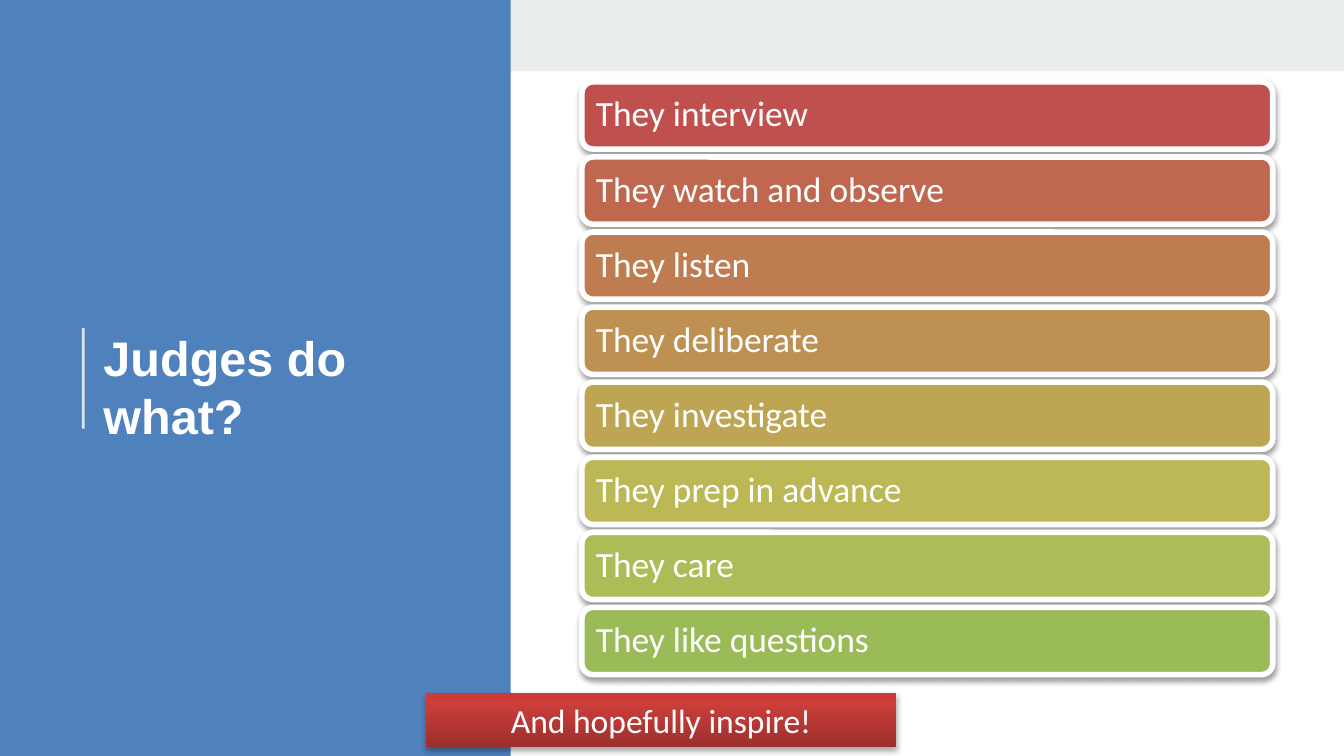
from copy import deepcopy
from lxml import etree
from pptx import Presentation
from pptx.dml.color import RGBColor
from pptx.enum.shapes import MSO_CONNECTOR as Line, MSO_SHAPE as Shape
from pptx.enum.text import MSO_ANCHOR as Anchor, MSO_AUTO_SIZE as Fit, PP_ALIGN as Align
from pptx.oxml.ns import qn
from pptx.util import Inches, Pt

# Content
TITLE = "Judges do what?"
DUTIES = [
    ("They interview", "C0504D"),
    ("They watch and observe", "BF674F"),
    ("They listen", "BF7C50"),
    ("They deliberate", "BE9152"),
    ("They investigate", "BDA554"),
    ("They prep in advance", "BCB856"),
    ("They care", "AEBC57"),
    ("They like questions", "9BBB59"),
]
CLOSING = "And hopefully inspire!"
GLOW = [(0, "9C2F2D"), (0.8, "CB3E3A"), (1, "CE3B37")]
WHITE = "FFFFFF"

# Layout in inches: a 16:9 slide, bars spread evenly from TOP to LAST
PAGE_W = 10
PAGE_H = PAGE_W * 9 / 16
TOP, LAST = 0.61, 4.52
STEP = (LAST - TOP) / (len(DUTIES) - 1)
LEFT, WIDE, HIGH = 4.33, 5.14, 0.5


def paint(color, code):
    color.rgb = RGBColor.from_string(code)


def add_box(kind, x, y, w, h, fill=None):
    box = slide.shapes.add_shape(kind, Inches(x), Inches(y), Inches(w), Inches(h))
    box.shadow.inherit = False
    box.line.fill.background()
    if fill:
        box.fill.solid()
        paint(box.fill.fore_color, fill)
    return box


def add_shadow(box, dist, alpha):
    effects = box._element.spPr.find(qn("a:effectLst"))
    shade = etree.SubElement(effects, qn("a:outerShdw"), blurRad=str(Pt(3.1)),
                             dist=str(Pt(dist)), dir="5400000", rotWithShape="0")
    black = etree.SubElement(shade, qn("a:srgbClr"), val="000000")
    etree.SubElement(black, qn("a:alpha"), val=str(alpha * 1000))


def write(box, text, size, font, align=Align.LEFT, anchor=Anchor.MIDDLE, inset=None):
    frame = box.text_frame
    frame.word_wrap = True
    frame.vertical_anchor = anchor
    if inset is not None:
        frame.margin_left = frame.margin_right = Inches(inset)
        frame.margin_top = frame.margin_bottom = Inches(inset)
    frame.text = text
    para = frame.paragraphs[0]
    para.alignment = align
    para.font.size = Pt(size)
    para.font.name = font
    paint(para.font.color, WHITE)
    return para


deck = Presentation()
deck.slide_width, deck.slide_height = Inches(PAGE_W), Inches(PAGE_H)
slide = deck.slides.add_slide(deck.slide_layouts[5])

# Top band and side panel
add_box(Shape.RECTANGLE, 0, 0, PAGE_W, 0.53, "E9EDEE")
add_box(Shape.RECTANGLE, 0, 0, 3.8, PAGE_H, "4F81BD")

# Rule beside the title
rule = slide.shapes.add_connector(Line.STRAIGHT, Inches(0.62), Inches(3.19),
                                  Inches(0.62), Inches(2.44))
rule.line.width = Pt(1.5)
paint(rule.line.color, WHITE)
tint = rule._element.spPr.find(".//" + qn("a:srgbClr"))
etree.SubElement(tint, qn("a:alpha"), val="80000")
etree.SubElement(rule._element.spPr, qn("a:effectLst"))

# Title, moved in front of the panel
title = slide.shapes.title
title.left, title.top = Inches(0.77), Inches(2.44)
title.width, title.height = Inches(2.76), Inches(2.66)
head = write(title, TITLE, 26, "Arial", anchor=Anchor.TOP, inset=0)
title.text_frame.auto_size = Fit.NONE
head.font.bold = True
slide.shapes._spTree.append(title._element)

# Stack of duties
for row, (text, fill) in enumerate(DUTIES):
    bar = add_box(Shape.ROUNDED_RECTANGLE, LEFT, TOP + row * STEP, WIDE, HIGH, fill)
    paint(bar.line.color, WHITE)
    bar.line.width = Pt(3)
    add_shadow(bar, 1.6, 38)
    write(bar, text, 19, "Calibri", inset=0.08).line_spacing = 0.9

# Closing banner with a three-stop gradient
banner = add_box(Shape.RECTANGLE, 3.17, 5.16, 3.5, 0.4)
banner.fill.gradient()
banner.fill.gradient_angle = 90
stops = banner._element.spPr.find(".//" + qn("a:gsLst"))
stops.append(deepcopy(stops[-1]))
for stop, (place, code) in zip(banner.fill.gradient_stops, GLOW):
    stop.position = place
    paint(stop.color, code)
add_shadow(banner, 1.8, 35)
write(banner, CLOSING, 18, "Calibri", Align.CENTER)

deck.save("out.pptx")
